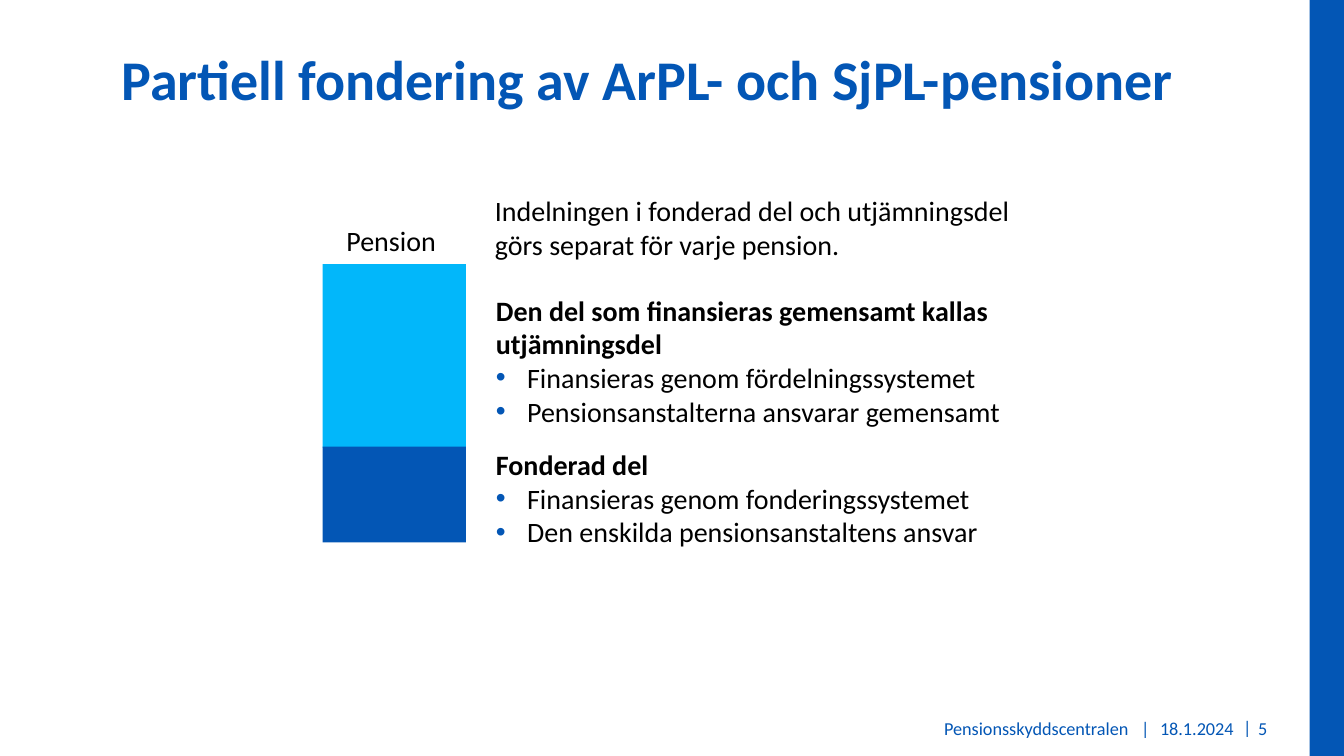
from dataclasses import dataclass

import pptx
import pptx.dml.color
import pptx.enum.shapes
import pptx.enum.text
import pptx.oxml
import pptx.oxml.ns
import pptx.util

ALIGN = pptx.enum.text.PP_ALIGN
ANCHOR = pptx.enum.text.MSO_ANCHOR
PX = 9144  # EMU: 100 px to the inch
BULLET_INDENT = 31


@dataclass(frozen=True)
class Theme:
    font: str = "Calibri"
    blue: str = "0356B5"
    light_blue: str = "02B7FA"
    black: str = "000000"
    title_size: int = 40
    body_size: int = 20
    footer_size: int = 13


THEME = Theme()


@dataclass(frozen=True)
class Area:
    left: int
    top: int
    width: int
    height: int

    def emu(self) -> list[int]:
        return [side * PX for side in (self.left, self.top, self.width, self.height)]


@dataclass(frozen=True)
class Block:
    area: Area
    color: str


@dataclass(frozen=True)
class Label:
    area: Area
    text: str
    size: int = THEME.body_size
    color: str = THEME.black
    bold: bool = False
    align: ALIGN = ALIGN.LEFT
    anchor: ANCHOR = ANCHOR.TOP
    inset_left: int = 10
    inset_right: int = 10
    wrap: bool = True
    bullets: tuple[str, ...] = ()


def footer(area: Area, text: str, **options) -> Label:
    settings = {"anchor": ANCHOR.MIDDLE, **options}
    return Label(area, text, THEME.footer_size, THEME.blue, **settings)


BLOCKS = [
    Block(Area(1299, 0, 35, 750), THEME.blue),
    Block(Area(320, 262, 142, 182), THEME.light_blue),
    Block(Area(320, 443, 142, 95), THEME.blue),
]

LABELS = [
    # Title
    Label(Area(0, 39, 1284, 146), "Partiell fondering av ArPL- och SjPL-pensioner",
          THEME.title_size, THEME.blue, bold=True, align=ALIGN.CENTER),
    # Pension column and its explanations
    Label(Area(325, 217, 126, 44), "Pension", align=ALIGN.CENTER),
    Label(Area(481, 187, 559, 77),
          "Indelningen i fonderad del och utjämningsdel görs separat för varje pension."),
    Label(Area(482, 286, 583, 145),
          "Den del som finansieras gemensamt kallas utjämningsdel", bold=True,
          bullets=("Finansieras genom fördelningssystemet",
                   "Pensionsanstalterna ansvarar gemensamt")),
    Label(Area(482, 439, 583, 111), "Fonderad del", bold=True,
          bullets=("Finansieras genom fonderingssystemet",
                   "Den enskilda pensionsanstaltens ansvar")),
    # Footer
    footer(Area(487, 705, 640, 35), "Pensionsskyddscentralen",
           align=ALIGN.RIGHT, inset_left=4, inset_right=8),
    footer(Area(1126, 705, 22, 35), "|", align=ALIGN.RIGHT, inset_left=0, inset_right=8),
    footer(Area(1139, 705, 96, 35), "18.1.2024",
           align=ALIGN.CENTER, inset_left=0, inset_right=0),
    footer(Area(1223, 706, 29, 35), "|", anchor=ANCHOR.TOP, wrap=False),
    footer(Area(1238, 705, 44, 35), "5"),
]


def rgb(color: str) -> pptx.dml.color.RGBColor:
    return pptx.dml.color.RGBColor.from_string(color)


def add_bullet(para) -> None:
    properties = para._p.get_or_add_pPr()
    properties.set("marL", str(BULLET_INDENT * PX))
    properties.set("indent", str(-BULLET_INDENT * PX))
    namespace = pptx.oxml.ns.nsdecls("a")
    for markup in (
        f'<a:buClr {namespace}><a:srgbClr val="{THEME.blue}"/></a:buClr>',
        f'<a:buFont {namespace} typeface="Arial"/>',
        f'<a:buChar {namespace} char="•"/>',
    ):
        properties.append(pptx.oxml.parse_xml(markup))


def draw_block(page, block: Block) -> None:
    shape = page.shapes.add_shape(
        pptx.enum.shapes.MSO_SHAPE.RECTANGLE, *block.area.emu())
    shape.shadow.inherit = False
    shape.fill.solid()
    shape.fill.fore_color.rgb = rgb(block.color)
    shape.line.fill.background()


def draw_label(page, label: Label) -> None:
    box = page.shapes.add_textbox(*label.area.emu())
    frame = box.text_frame
    frame.word_wrap = label.wrap
    frame.vertical_anchor = label.anchor
    frame.margin_left = label.inset_left * PX
    frame.margin_right = label.inset_right * PX
    frame.text = "\n".join((label.text, *label.bullets))
    for index, para in enumerate(frame.paragraphs):
        para.alignment = label.align
        if index:
            add_bullet(para)
        for span in para.runs:
            span.font.name = THEME.font
            span.font.size = pptx.util.Pt(label.size)
            span.font.bold = label.bold and index == 0
            span.font.color.rgb = rgb(label.color)


def main() -> None:
    deck = pptx.Presentation()
    deck.slide_width = 1333 * PX
    deck.slide_height = 750 * PX
    page = deck.slides.add_slide(deck.slide_layouts[6])
    for block in BLOCKS:
        draw_block(page, block)
    for label in LABELS:
        draw_label(page, label)
    deck.save("out.pptx")


if __name__ == "__main__":
    main()
